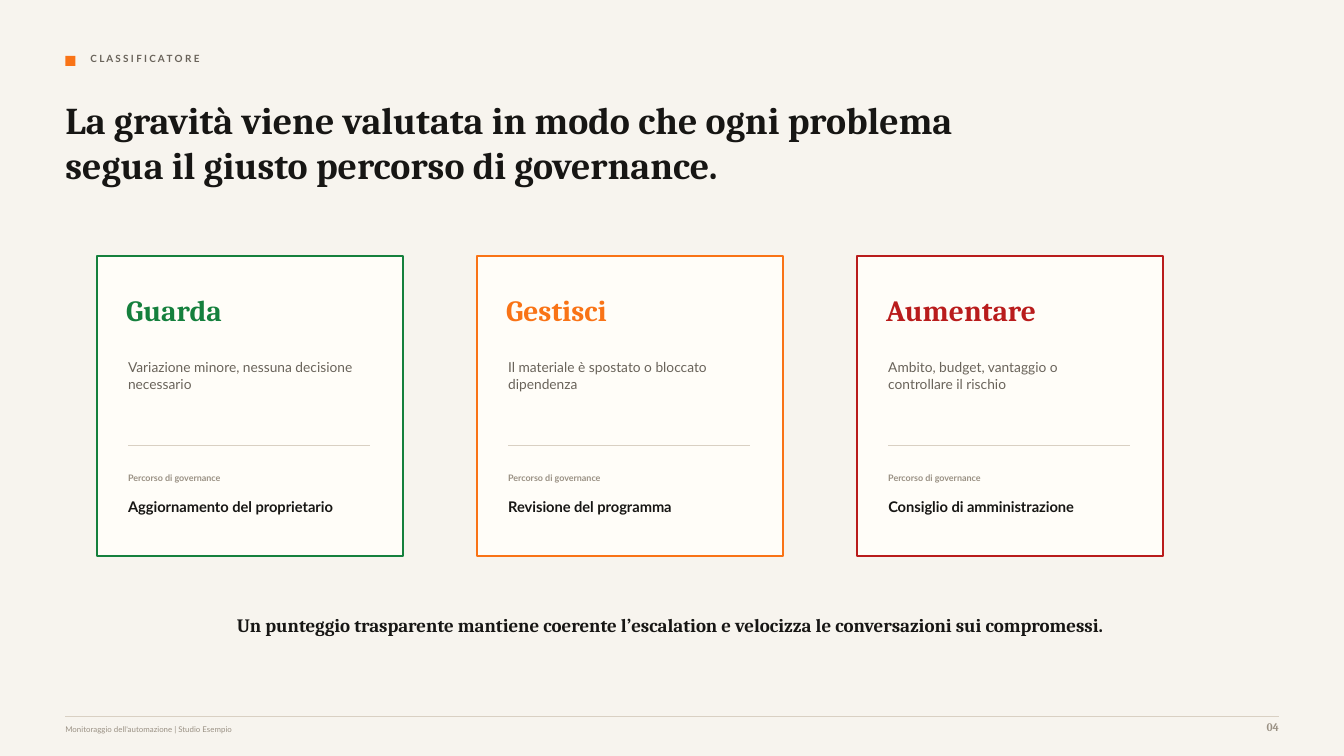
from dataclasses import dataclass

from lxml import etree
from pptx import Presentation
from pptx.dml.color import RGBColor
from pptx.enum.shapes import MSO_CONNECTOR, MSO_SHAPE
from pptx.enum.text import MSO_ANCHOR, MSO_AUTO_SIZE, PP_ALIGN
from pptx.oxml.ns import qn
from pptx.slide import Slide
from pptx.util import Inches, Pt

RECT = MSO_SHAPE.RECTANGLE
STRAIGHT = MSO_CONNECTOR.STRAIGHT
TOP = MSO_ANCHOR.TOP
FIXED = MSO_AUTO_SIZE.NONE
LEFT, CENTER, RIGHT = PP_ALIGN.LEFT, PP_ALIGN.CENTER, PP_ALIGN.RIGHT

WIDTH, HEIGHT = Inches(13.33), Inches(7.5)
COL, ROW = WIDTH / 100, HEIGHT / 100
EDGE = 4.86
FIRST, PITCH = 7.2, 28.28
SERIF, SANS = "Cambria", "Lato"
COLORS = {
    "paper": "F7F4EE",
    "card": "FFFDF8",
    "ink": "171614",
    "gray": "69635A",
    "mute": "9A9184",
    "rule": "D9D0C3",
    "green": "15803D",
    "orange": "F97316",
    "red": "B91C1C",
}


@dataclass(frozen=True)
class Box:
    x: float
    y: float
    w: float
    h: float

    def place(self) -> tuple[int, int, int, int]:
        return (round(self.x * COL), round(self.y * ROW),
                round(self.w * COL), round(self.h * ROW))


@dataclass(frozen=True)
class Level:
    name: str
    color: str
    scope: str
    route: str


LEVELS = [
    Level("Guarda", "green", "Variazione minore, nessuna decisione\nnecessario",
          "Aggiornamento del proprietario"),
    Level("Gestisci", "orange", "Il materiale è spostato o bloccato\ndipendenza",
          "Revisione del programma"),
    Level("Aumentare", "red", "Ambito, budget, vantaggio o\ncontrollare il rischio",
          "Consiglio di amministrazione"),
]


def tint(name: str) -> RGBColor:
    return RGBColor.from_string(COLORS[name])


def write(slide: Slide, text: str, box: Box, *, size: float, color: str = "ink",
          font: str = SANS, bold: bool = True, align: PP_ALIGN = LEFT,
          title: bool = False) -> None:
    if title:
        shape = slide.shapes.title
        shape.left, shape.top, shape.width, shape.height = box.place()
    else:
        shape = slide.shapes.add_textbox(*box.place())
    frame = shape.text_frame
    frame.text = text
    frame.word_wrap = True
    frame.auto_size = FIXED
    frame.vertical_anchor = TOP
    frame.margin_left = frame.margin_right = 0
    frame.margin_top = frame.margin_bottom = 0
    for para in frame.paragraphs:
        para.alignment = align
        para.font.name = font
        para.font.size = Pt(size)
        para.font.bold = bold
        para.font.color.rgb = tint(color)


def block(slide: Slide, box: Box, fill: str, edge: str | None = None) -> None:
    shape = slide.shapes.add_shape(RECT, *box.place())
    shape.shadow.inherit = False
    shape.fill.solid()
    shape.fill.fore_color.rgb = tint(fill)
    if edge:
        shape.line.color.rgb = tint(edge)
        shape.line.width = Pt(1.5)
    else:
        shape.line.fill.background()


def rule(slide: Slide, x: float, y: float, w: float) -> None:
    left, top, width, _ = Box(x, y, w, 0).place()
    line = slide.shapes.add_connector(STRAIGHT, left, top, left + width, top)
    line.line.color.rgb = tint("rule")
    line.line.width = Pt(0.75)
    etree.SubElement(line._element.spPr, qn("a:effectLst"))


def card(slide: Slide, level: Level, x: float) -> None:
    inner = x + 2.33
    block(slide, Box(x, 33.87, 22.8, 39.73), "card", level.color)
    write(slide, level.name, Box(x + 2.18, 38.67, 17.18, 4.67),
          size=21, color=level.color, font=SERIF)
    write(slide, level.scope, Box(inner, 47.47, 17.48, 6.93),
          size=9.8, color="gray", bold=False)
    rule(slide, inner, 58.95, 18)
    write(slide, "Percorso di governance", Box(inner, 62.53, 12.53, 2),
          size=6.4, color="mute")
    write(slide, level.route, Box(inner, 65.87, 17.18, 3.07), size=10.5)


def main() -> None:
    deck = Presentation()
    deck.slide_width, deck.slide_height = WIDTH, HEIGHT
    slide = deck.slides.add_slide(deck.slide_layouts[5])
    slide.background.fill.solid()
    slide.background.fill.fore_color.rgb = tint("paper")

    block(slide, Box(EDGE, 7.38, 0.75, 1.33), "orange")
    write(slide, "C L A S S I F I C A T O R E", Box(6.73, 6.93, 40.65, 2.53),
          size=7.1, color="gray")
    write(slide, "La gravità viene valutata in modo che ogni problema "
          "segua il giusto percorso di governance.",
          Box(EDGE, 12.8, 70.35, 13.6), size=27, font=SERIF, title=True)

    for i, level in enumerate(LEVELS):
        card(slide, level, FIRST + i * PITCH)

    write(slide, "Un punteggio trasparente mantiene coerente l’escalation "
          "e velocizza le conversazioni sui compromessi.",
          Box(12.36, 81.13, 75, 3.87), size=13.5, font=SERIF, align=CENTER)
    rule(slide, EDGE, 94.73, 90.3)
    write(slide, "Monitoraggio dell'automazione | Studio Esempio",
          Box(EDGE, 95.87, 59.4, 2), size=5.6, color="mute", bold=False)
    write(slide, "04", Box(91.41, 95.27, 3.75, 2.53),
          size=8.2, color="mute", font=SERIF, align=RIGHT)
    deck.save("out.pptx")


if __name__ == "__main__":
    main()
